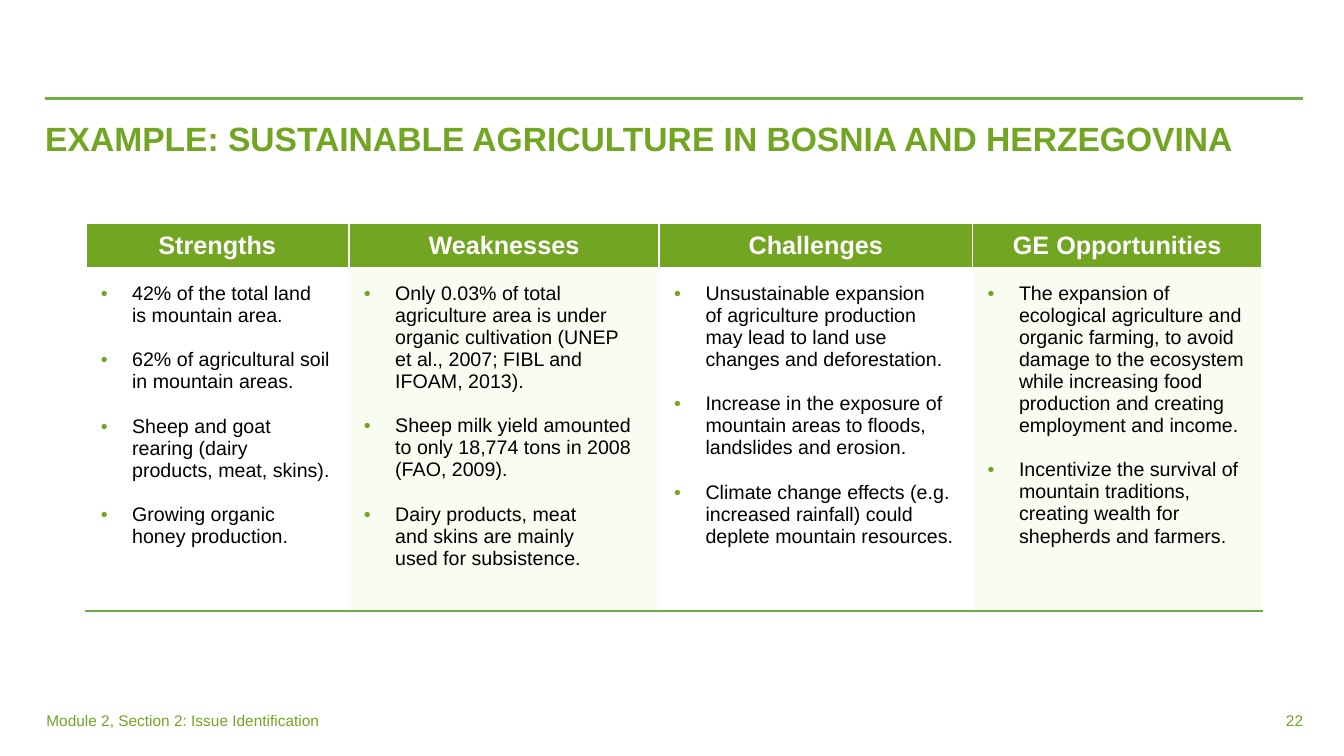
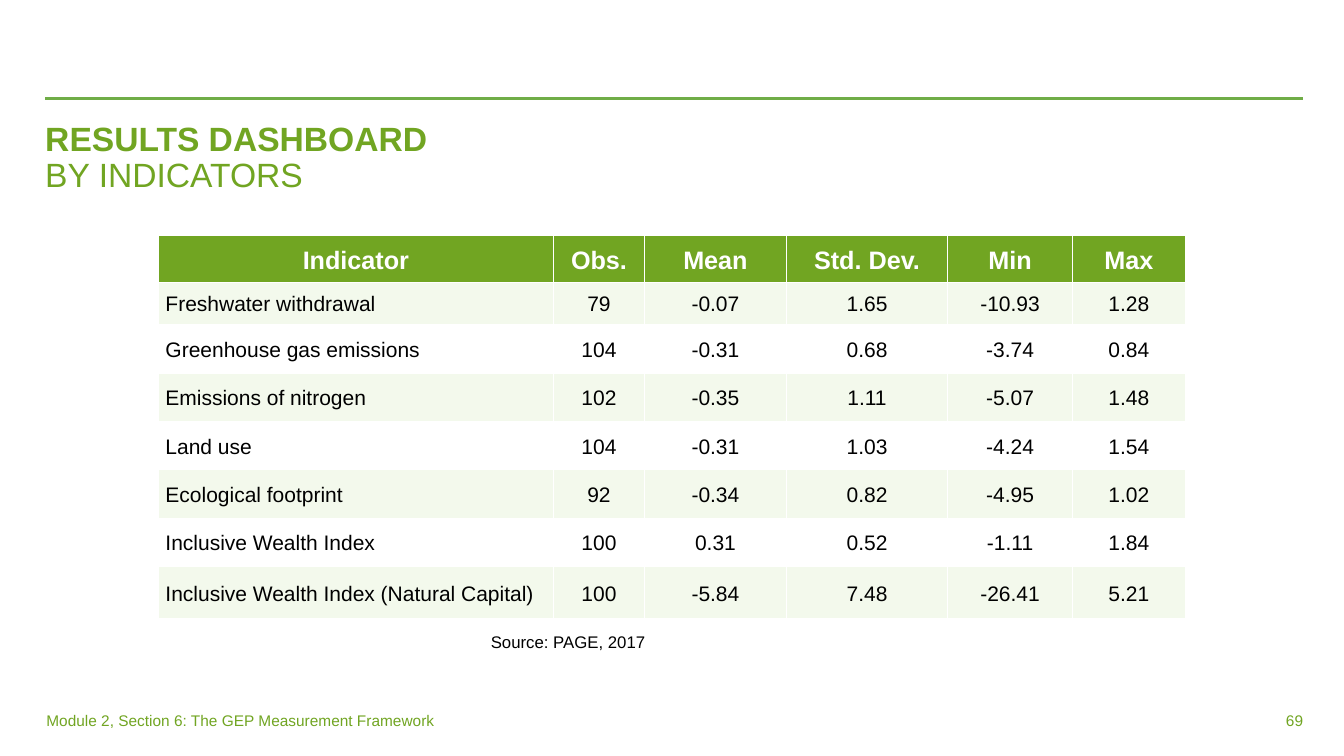
from lxml.etree import SubElement
from pptx import Presentation
from pptx.dml.color import RGBColor
from pptx.enum.shapes import MSO_CONNECTOR
from pptx.enum.text import MSO_ANCHOR as Anchor, MSO_AUTO_SIZE as AutoSize, PP_ALIGN as Align
from pptx.oxml.ns import qn
from pptx.util import Cm, Pt

FONT = "Arial"
GREEN, RULE, TABLE_RULE = "71A522", "70AD47", "71A547"
TINT, BAND, WHITE, BLACK = "DCF2BC", "F3F9EC", "FFFFFF", "000000"
LEFT, RIGHT = 1.14, 32.84  # content edges in centimetres


def rgb(color):
    return RGBColor.from_string(color)


def add_solid(parent, color):
    SubElement(SubElement(parent, qn("a:solidFill")), qn("a:srgbClr"), val=color)


class Deck:
    def __init__(self):
        self.presentation = Presentation()
        self.presentation.slide_width = Cm(33.87)
        self.presentation.slide_height = Cm(19.05)
        self.slide = None

    # Shared frame: top rule, title, footer and slide number
    def add_slide(self, title, title_size, footer, number):
        self.slide = self.presentation.slides.add_slide(self.presentation.slide_layouts[5])
        self.rule(2.49)
        self.title(title, *title_size)
        self.text(footer, LEFT + 0.03, 17.65, 11, 1.02, 11, GREEN, margins=(0, 0.25))
        self.text(number, RIGHT - 2.8, 17.65, 2.8, 1.02, 11, GREEN,
                  align=Align.RIGHT, margins=(0.25, 0))

    def rule(self, top):
        line = self.slide.shapes.add_connector(
            MSO_CONNECTOR.STRAIGHT, Cm(LEFT), Cm(top), Cm(RIGHT), Cm(top))
        line.line.color.rgb = rgb(RULE)
        line.line.width = Pt(2)
        SubElement(line._element.spPr, qn("a:effectLst"))

    def title(self, lines, width, height):
        """Set the title: first line bold, any further line regular."""
        shape = self.slide.shapes.title
        shape.left, shape.top, shape.width, shape.height = Cm(LEFT), Cm(2.95), Cm(width), Cm(height)
        frame = shape.text_frame
        frame.auto_size, frame.vertical_anchor = AutoSize.NONE, Anchor.TOP
        frame.margin_left = frame.margin_right = 0
        paragraph = frame.paragraphs[0]
        for index, line in enumerate(lines):
            if index:
                paragraph.add_line_break()
            run = paragraph.add_run()
            run.text, run.font.bold = line, index == 0
        paragraph.line_spacing = 0.9
        self.style(paragraph, 24, GREEN)

    def text(self, text, left, top, width, height, size, color,
             align=Align.LEFT, margins=(0.25, 0.25), wrap=True):
        box = self.slide.shapes.add_textbox(Cm(left), Cm(top), Cm(width), Cm(height))
        frame = box.text_frame
        frame.word_wrap, frame.vertical_anchor = wrap, Anchor.MIDDLE
        frame.margin_left, frame.margin_right = map(Cm, margins)
        frame.text = text
        self.style(frame.paragraphs[0], size, color, align)

    def style(self, paragraph, size, color, align=Align.LEFT, bold=None):
        paragraph.alignment = align
        font = paragraph.font
        font.name, font.size, font.bold = FONT, Pt(size), bold
        font.color.rgb = rgb(color)

    def bullet(self, paragraph):
        properties = paragraph._p.get_or_add_pPr()
        properties.set("marL", str(Cm(0.79)))
        properties.set("indent", str(-Cm(0.79)))
        SubElement(SubElement(properties, qn("a:buClr")), qn("a:srgbClr"), val=GREEN)
        SubElement(properties, qn("a:buFont"), typeface=FONT)
        SubElement(properties, qn("a:buChar"), char="•")

    def table(self, left, top, columns, rows):
        frame = self.slide.shapes.add_table(
            len(rows), len(columns), Cm(left), Cm(top), Cm(sum(columns)), Cm(sum(rows)))
        table = frame.table
        table.horz_banding = False
        for column, width in zip(table.columns, columns):
            column.width = Cm(width)
        for row, height in zip(table.rows, rows):
            row.height = Cm(height)
        return table

    def cell(self, cell, fill, border, margins, bottom=WHITE, alpha=None, anchor=Anchor.MIDDLE):
        """Give a cell its borders, fill, margins and anchor."""
        properties = cell._tc.get_or_add_tcPr()
        for side in "LRTB":
            line = SubElement(properties, qn(f"a:ln{side}"), w=str(Pt(border)))
            add_solid(line, bottom if side == "B" else WHITE)
        cell.fill.solid()
        cell.fill.fore_color.rgb = rgb(fill)
        if alpha:
            color = properties.find(qn("a:solidFill")).find(qn("a:srgbClr"))
            SubElement(color, qn("a:alpha"), val=str(alpha * 1000))
        cell.margin_left = cell.margin_right = Cm(margins[0])
        cell.margin_top = cell.margin_bottom = Cm(margins[1])
        cell.vertical_anchor = anchor

    def cell_text(self, cell, text, size, color, align, bold=False, spacing=None):
        cell.text = text
        paragraph = cell.text_frame.paragraphs[0]
        paragraph.line_spacing = spacing
        self.style(paragraph, size, color, align, bold)

    def cell_list(self, cell, items):
        frame = cell.text_frame
        for index, item in enumerate(items):
            paragraph = frame.add_paragraph() if index else frame.paragraphs[0]
            paragraph.text = item
            self.bullet(paragraph)
            if index:
                paragraph.space_before = Pt(16)
            self.style(paragraph, 14, BLACK, bold=False)


SWOT = {
    "Strengths": [
        "42% of the total land\vis mountain area.",
        "62% of agricultural soil in mountain areas.",
        "Sheep and goat rearing (dairy products, meat, skins).",
        "Growing organic\vhoney production.",
    ],
    "Weaknesses": [
        "Only 0.03% of total agriculture area is under organic cultivation (UNEP\v"
        "et al., 2007; FIBL and IFOAM, 2013).",
        "Sheep milk yield amounted to only 18,774 tons in 2008 (FAO, 2009).",
        "Dairy products, meat\vand skins are mainly\vused for subsistence.",
    ],
    "Challenges": [
        "Unsustainable expansion\vof agriculture production\v"
        "may lead to land use changes and deforestation.",
        "Increase in the exposure of mountain areas to floods, landslides and erosion.",
        "Climate change effects (e.g. increased rainfall) could deplete mountain resources.",
    ],
    "GE Opportunities": [
        "The expansion of ecological agriculture and organic farming, to avoid damage to the "
        "ecosystem while increasing food production and creating employment and income.",
        "Incentivize the survival of mountain traditions, creating wealth for "
        "shepherds and farmers.",
    ],
}

INDICATORS = [
    ("Indicator", "Obs.", "Mean", "Std. Dev.", "Min", "Max"),
    ("Freshwater withdrawal", "79", "-0.07", "1.65", "-10.93", "1.28"),
    ("Greenhouse gas emissions", "104", "-0.31", "0.68", "-3.74", "0.84"),
    ("Emissions of nitrogen", "102", "-0.35", "1.11", "-5.07", "1.48"),
    ("Land use", "104", "-0.31", "1.03", "-4.24", "1.54"),
    ("Ecological footprint", "92", "-0.34", "0.82", "-4.95", "1.02"),
    ("Inclusive Wealth Index", "100", "0.31", "0.52", "-1.11", "1.84"),
    ("Inclusive Wealth Index (Natural Capital)", "100", "-5.84", "7.48", "-26.41", "5.21"),
]


def agriculture_slide(deck):
    deck.add_slide(["EXAMPLE: SUSTAINABLE AGRICULTURE IN BOSNIA AND HERZEGOVINA"],
                   (RIGHT - LEFT, 2.64), "Module 2, Section 2: Issue Identification", "22")
    table = deck.table(2.16, 5.62, [6.63, 7.82, 7.9, 7.29], [1.12, 8.66])
    for column, (heading, items) in enumerate(SWOT.items()):
        header, body = table.cell(0, column), table.cell(1, column)
        deck.cell(header, GREEN, 1.5, (0.23, 0.13))
        deck.cell_text(header, heading, 18, WHITE, Align.CENTER, bold=True)
        deck.cell(body, TINT if column % 2 else WHITE, 1.5, (0.38, 0.38),
                  bottom=TABLE_RULE, alpha=20, anchor=Anchor.TOP)
        deck.cell_list(body, items)


def dashboard_slide(deck):
    deck.add_slide(["RESULTS DASHBOARD", "BY INDICATORS"], (10.7, 2.03),
                   "Module 2, Section 6: The GEP Measurement Framework", "69")
    table = deck.table(3.99, 5.94, [9.96, 2.29, 3.58, 4.06, 3.15, 2.84],
                       [1.17, 1.07] + [1.22] * 5 + [1.32])
    for row, values in enumerate(INDICATORS):
        is_header = row == 0
        fill = GREEN if is_header else BAND if row % 2 else WHITE
        size, color = (18, WHITE) if is_header else (15, BLACK)
        for column, value in enumerate(values):
            cell = table.cell(row, column)
            align = Align.CENTER if is_header or column else Align.LEFT
            deck.cell(cell, fill, 1, (0.18, 0))
            deck.cell_text(cell, value, size, color, align, bold=is_header, spacing=1.1)
    deck.text("Source: PAGE, 2017", 12.12, 15.8, 4.47, 0.76, 12, BLACK, wrap=False)


def main():
    deck = Deck()
    agriculture_slide(deck)
    dashboard_slide(deck)
    deck.presentation.save("out.pptx")


if __name__ == "__main__":
    main()
